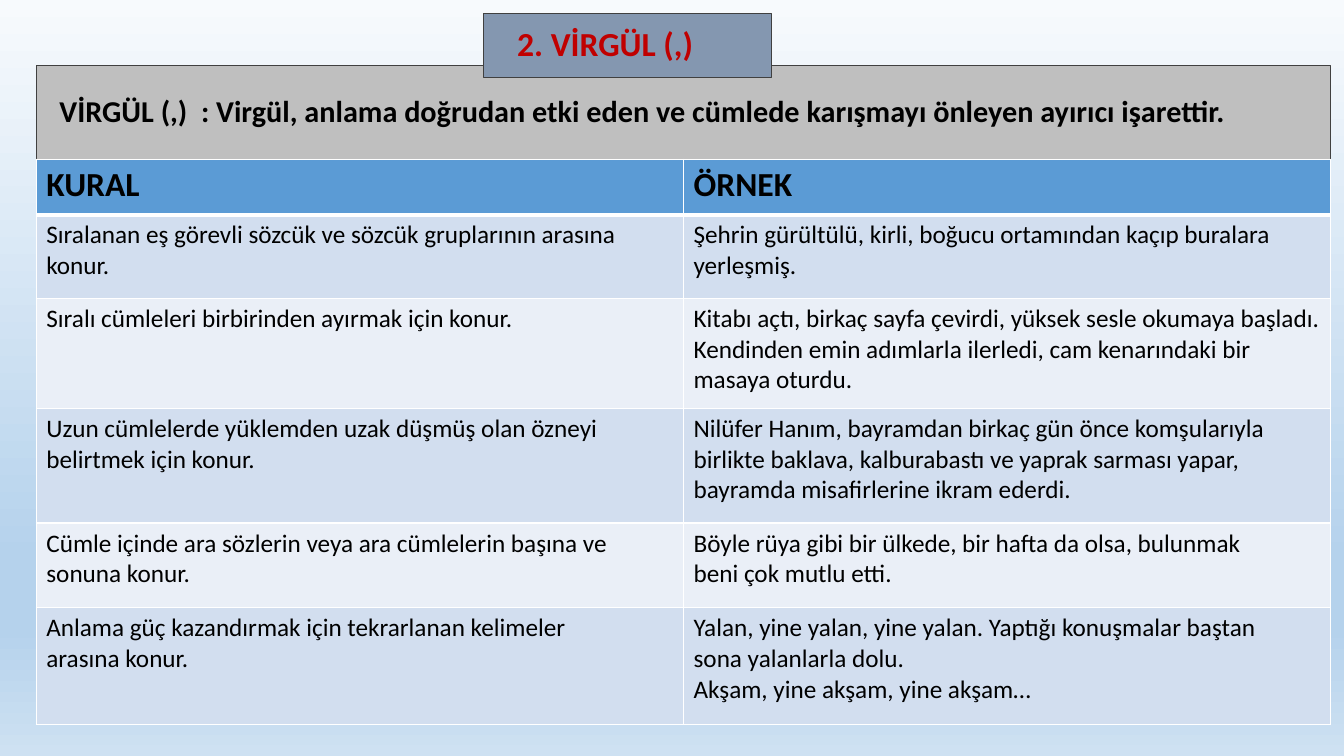
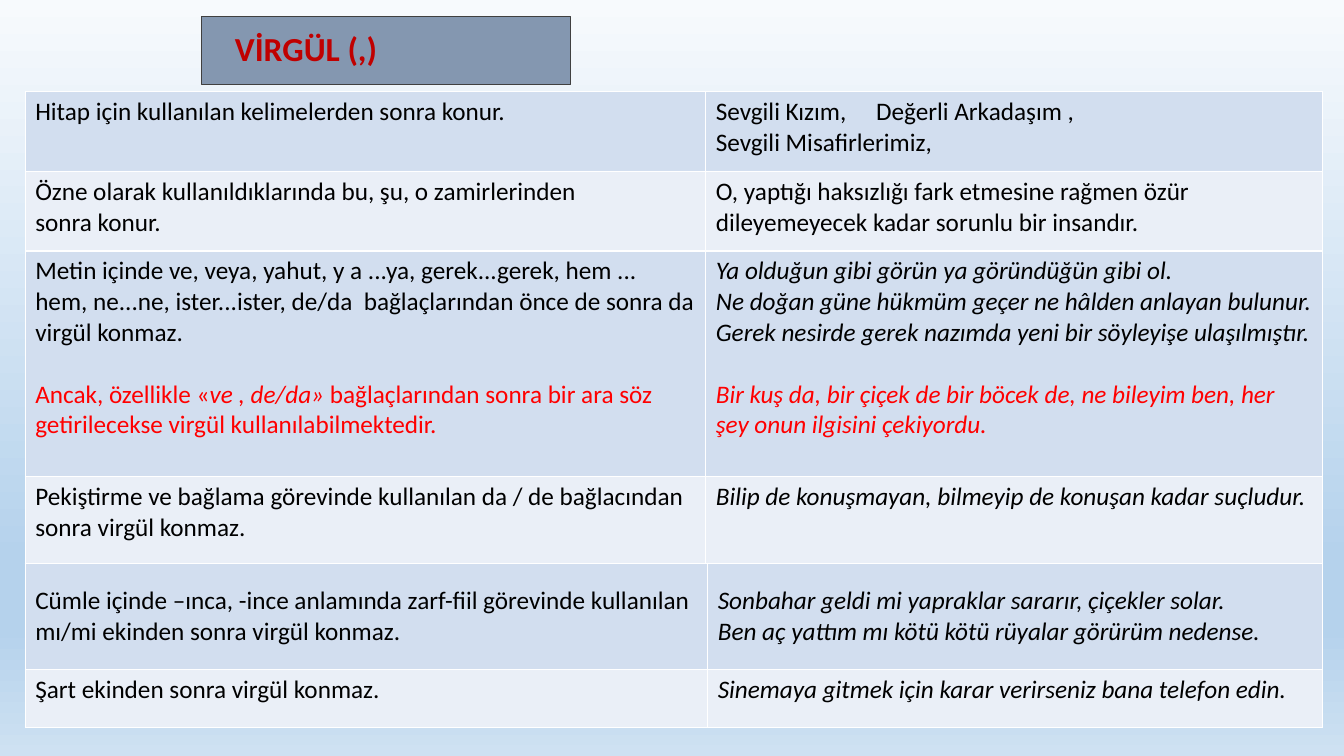
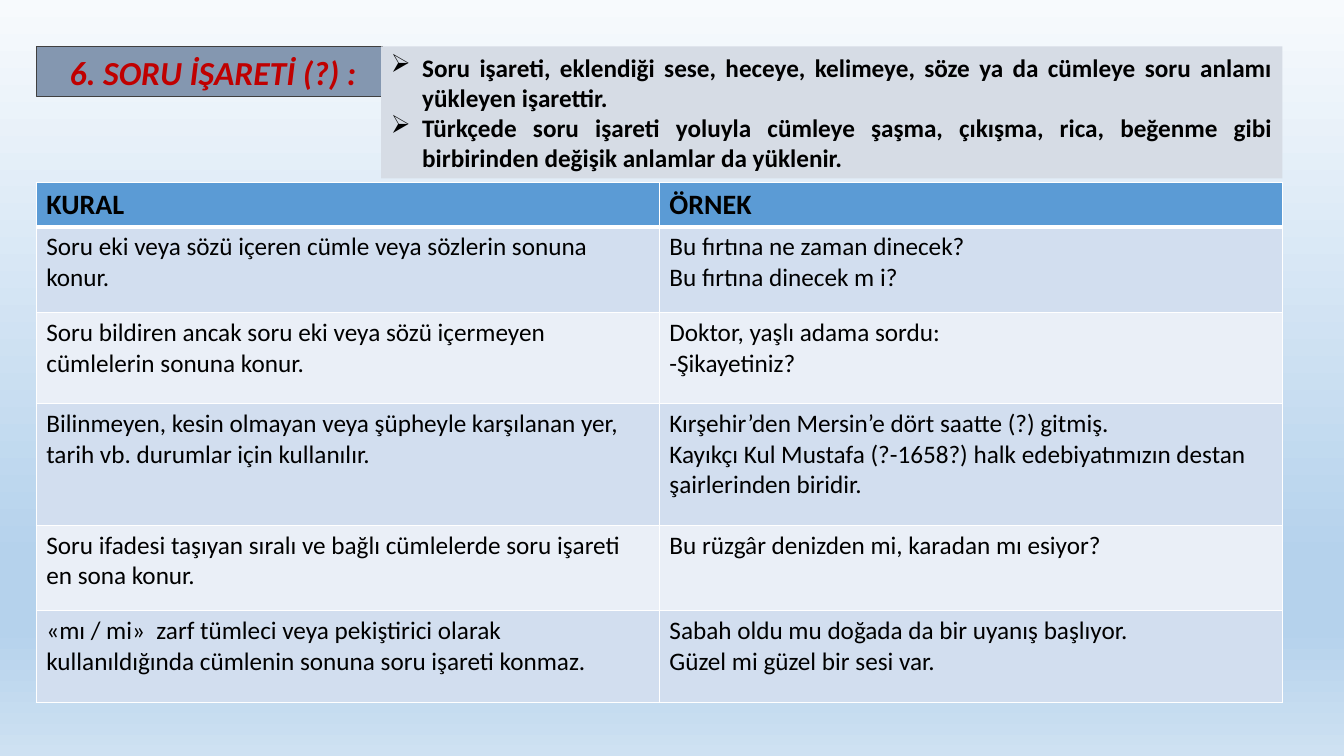
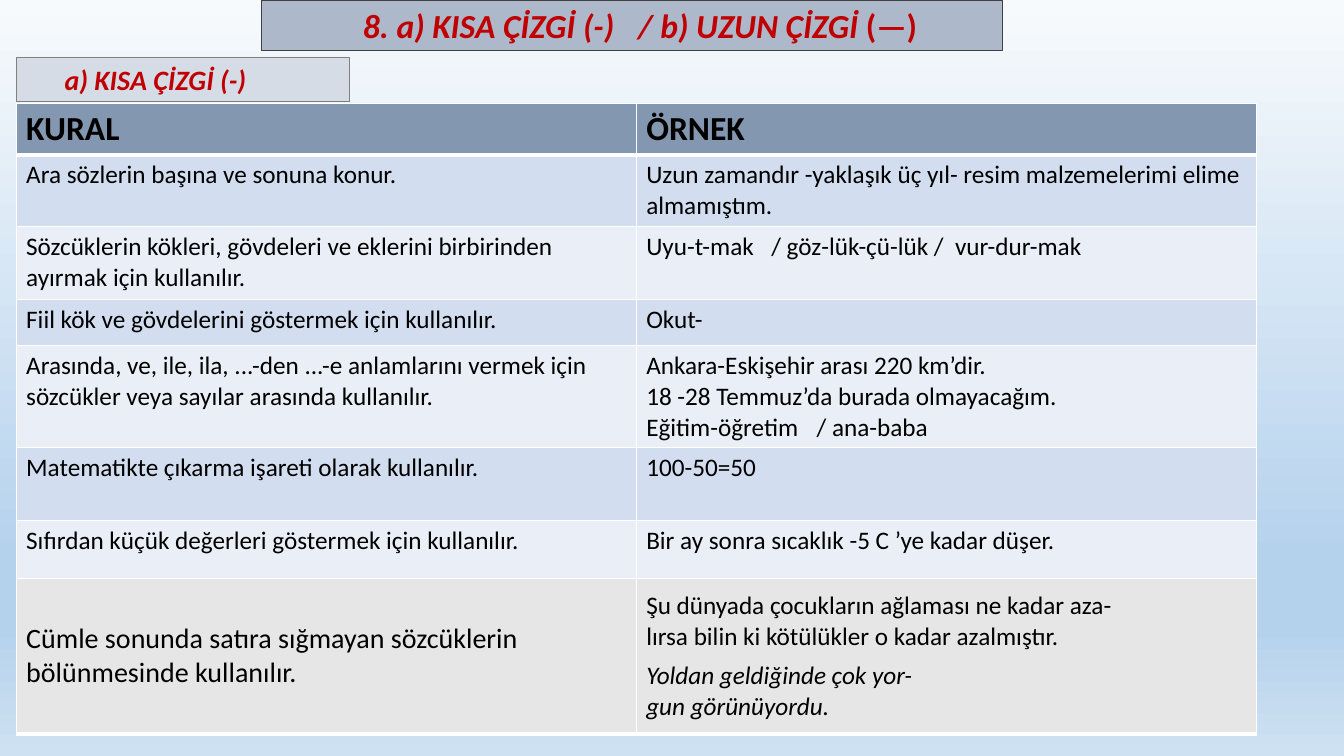
from dataclasses import dataclass

from lxml import etree
from pptx import Presentation
from pptx import util as u
from pptx.dml.color import RGBColor
from pptx.enum import shapes, text
from pptx.oxml.ns import qn

COLORS = {
    "black": "000000", "white": "FFFFFF", "dark_red": "C00000", "red": "FF0000",
    "outline": "404040", "soft_outline": "808080", "band": "BFBFBF",
    "slate": "8497B0", "light_slate": "ADB9CA", "pale_slate": "D6DCE5",
    "header": "5B9BD5", "stripe_a": "D2DEEF", "stripe_b": "EAEFF7", "gray": "E7E6E6",
}
BACKGROUND = [(0, "F7FAFD"), (74, "B5D2EC"), (83, "B5D2EC"), (100, "CEE1F2")]
FONT = "Calibri"
HEADER = ("KURAL", "ÖRNEK")


@dataclass
class Line:
    """One paragraph; parts between underscores switch italic on or off."""
    text: str
    size: float = 18
    color: str = "black"
    bold: bool = False
    italic: bool = False
    before: float = 0
    after: float = 0
    tab: float = 0
    bullet: str = ""
    spacing: float = 1
    align: text.PP_ALIGN = text.PP_ALIGN.LEFT


def rgb(name):
    return RGBColor.from_string(COLORS[name])


def lines(content, **formats):
    return [Line(part, **formats) for part in content.split("\n")]


def write_line(paragraph, line):
    paragraph.alignment = line.align
    paragraph.line_spacing = line.spacing
    paragraph.space_before = u.Pt(line.before)
    paragraph.space_after = u.Pt(line.after)
    properties = paragraph._p.get_or_add_pPr()
    if line.bullet:
        properties.set("marL", str(u.Inches(0.31)))
        properties.set("indent", str(-u.Inches(0.31)))
        etree.SubElement(properties, qn("a:buChar"), char=line.bullet)
    if line.tab:
        stops = etree.SubElement(properties, qn("a:tabLst"))
        etree.SubElement(stops, qn("a:tab"), pos=str(u.Inches(line.tab)), algn="l")
    for index, part in enumerate(line.text.split("_")):
        if part:
            run = paragraph.add_run()
            run.text = part
            run.font.name = FONT
            run.font.size = u.Pt(line.size)
            run.font.bold = line.bold
            run.font.italic = line.italic != (index % 2 == 1)
            run.font.color.rgb = rgb(line.color)


def write(frame, content):
    for index, line in enumerate(content):
        write_line(frame.add_paragraph() if index else frame.paragraphs[0], line)


def set_borders(cell, top, bottom):
    """Draw white cell borders; side borders are 1 point wide."""
    properties = cell._tc.get_or_add_tcPr()
    widths = {"lnL": 1, "lnR": 1, "lnT": top, "lnB": bottom}
    for index, (tag, width) in enumerate(widths.items()):
        border = etree.Element(qn(f"a:{tag}"), w=str(u.Pt(width)))
        fill = etree.SubElement(border, qn("a:solidFill"))
        etree.SubElement(fill, qn("a:srgbClr"), val=COLORS["white"])
        properties.insert(index, border)


class Deck:
    def __init__(self):
        self.presentation = Presentation()
        self.presentation.slide_width = u.Inches(13.33)
        self.presentation.slide_height = u.Inches(7.5)
        self.slide = None
        self.set_background()

    def set_background(self):
        master = self.presentation.slide_master
        fill = master.background.fill
        fill.gradient()
        fill.gradient_angle = 270
        stops = next(master.element.iter(qn("a:gsLst")))
        for stop in list(stops):
            stops.remove(stop)
        for position, color in BACKGROUND:
            stop = etree.SubElement(stops, qn("a:gs"), pos=str(position * 1000))
            etree.SubElement(stop, qn("a:srgbClr"), val=color)

    def new_slide(self):
        self.slide = self.presentation.slides.add_slide(self.presentation.slide_layouts[5])

    def fill_box(self, shape, content, fill, line, inset):
        shape.fill.solid()
        shape.fill.fore_color.rgb = rgb(fill)
        if line:
            shape.line.color.rgb = rgb(line)
            shape.line.width = u.Pt(0.75)
        else:
            shape.line.fill.background()
        frame = shape.text_frame
        frame.word_wrap = True
        frame.auto_size = text.MSO_AUTO_SIZE.NONE
        frame.vertical_anchor = text.MSO_ANCHOR.MIDDLE
        frame.margin_left = u.Inches(inset)
        write(frame, content)

    def title(self, at, content, fill="slate", line="outline", inset=0.33):
        shape = self.slide.shapes.title
        shape.left, shape.top, shape.width, shape.height = map(u.Inches, at)
        self.fill_box(shape, content, fill, line, inset)

    def box(self, at, content, fill="slate", line="outline", inset=0.33):
        shape = self.slide.shapes.add_shape(shapes.MSO_SHAPE.RECTANGLE, *map(u.Inches, at))
        shape.shadow.inherit = False
        self.fill_box(shape, content, fill, line, inset)

    def table(self, at, columns, heights, rows, header_fill=None, header_size=24,
              fills=("stripe_a", "stripe_b"), middle_row=None, bottom=1):
        """Add a rule table; a header row comes first when header_fill is given."""
        header = 1 if header_fill else 0
        if header:
            titles = [lines(name, size=header_size, bold=True) for name in HEADER]
            rows = [titles] + rows
        frame = self.slide.shapes.add_table(
            len(rows), len(columns), *map(u.Inches, (*at, sum(columns), sum(heights))))
        table = frame.table
        table.first_row = bool(header)
        table.horz_banding = False
        for column, width in zip(table.columns, columns):
            column.width = u.Inches(width)
        for index, (row, height, contents) in enumerate(zip(table.rows, heights, rows)):
            row.height = u.Inches(height)
            is_header = index < header
            fill = header_fill if is_header else fills[(index - header) % len(fills)]
            below = 3 if is_header else bottom if index == len(rows) - 1 else 1
            above = 3 if header and index == 1 else 1
            for cell, content in zip(row.cells, contents):
                cell.fill.solid()
                cell.fill.fore_color.rgb = rgb(fill)
                set_borders(cell, above, below)
                if index == middle_row:
                    cell.vertical_anchor = text.MSO_ANCHOR.MIDDLE
                write(cell.text_frame, lines(content) if isinstance(content, str) else content)


def comma_rules(deck):
    deck.new_slide()
    deck.title((0.36, 0.65, 12.84, 0.94), lines(
        "VİRGÜL (,)  : Virgül, anlama doğrudan etki eden ve cümlede karışmayı önleyen "
        "ayırıcı işarettir.", size=21.6, bold=True, spacing=0.9), "band", inset=0.23)
    deck.table((0.36, 1.58), (6.42, 6.42), (0.55, 0.83, 1.09, 1.14, 0.84, 1.16), [
        ("Sıralanan eş görevli sözcük ve sözcük gruplarının arasına\nkonur.",
         "Şehrin gürültülü, kirli, boğucu ortamından kaçıp buralara\nyerleşmiş."),
        ("Sıralı cümleleri birbirinden ayırmak için konur.",
         "Kitabı açtı, birkaç sayfa çevirdi, yüksek sesle okumaya başladı.\n"
         "Kendinden emin adımlarla ilerledi, cam kenarındaki bir masaya oturdu."),
        ("Uzun cümlelerde yüklemden uzak düşmüş olan özneyi\nbelirtmek için konur.",
         "Nilüfer Hanım, bayramdan birkaç gün önce komşularıyla\n"
         "birlikte baklava, kalburabastı ve yaprak sarması yapar,\n"
         "bayramda misafirlerine ikram ederdi."),
        ("Cümle içinde ara sözlerin veya ara cümlelerin başına ve\nsonuna konur.",
         "Böyle rüya gibi bir ülkede, bir hafta da olsa, bulunmak\nbeni çok mutlu etti."),
        ("Anlama güç kazandırmak için tekrarlanan kelimeler\narasına konur.",
         "Yalan, yine yalan, yine yalan. Yaptığı konuşmalar baştan\nsona yalanlarla dolu.\n"
         "Akşam, yine akşam, yine akşam…"),
    ], "header")
    deck.box((4.8, 0.13, 2.85, 0.64), lines(
        "2. VİRGÜL (,)", size=24, color="dark_red", bold=True, spacing=0.9))


def comma_exceptions(deck):
    deck.new_slide()
    deck.title((2, 0.16, 3.66, 0.68), lines(
        "VİRGÜL (,)", size=24, color="dark_red", bold=True, spacing=0.9))
    deck.table((0.25, 0.91), (6.75, 6.12), (0.79, 0.79, 2.24, 0.86), [
        ("Hitap için kullanılan kelimelerden sonra konur.",
         [Line("Sevgili Kızım,\tDeğerli Arkadaşım ,", tab=1.59),
          Line("Sevgili Misafirlerimiz,")]),
        ("Özne olarak kullanıldıklarında bu, şu, o zamirlerinden\nsonra konur.",
         "O, yaptığı haksızlığı fark etmesine rağmen özür dileyemeyecek kadar sorunlu "
         "bir insandır."),
        (lines("Metin içinde ve, veya, yahut, y a ...ya, gerek...gerek, hem ...\n"
               "hem, ne...ne, ister...ister, de/da  bağlaçlarından önce de sonra da\n"
               "virgül konmaz.")
         + [Line("Ancak, özellikle «_ve , de/da»_ bağlaçlarından sonra bir ara söz "
                 "getirilecekse virgül kullanılabilmektedir.", color="red", before=22)],
         lines("Ya olduğun gibi görün ya göründüğün gibi ol.\n"
               "Ne doğan güne hükmüm geçer ne hâlden anlayan bulunur. Gerek nesirde gerek "
               "nazımda yeni bir söyleyişe ulaşılmıştır.", italic=True)
         + [Line("Bir kuş da, bir çiçek de bir böcek de, ne bileyim ben, her şey onun "
                 "ilgisini çekiyordu.", color="red", italic=True, before=22)]),
        ("Pekiştirme ve bağlama görevinde kullanılan da / de bağlacından sonra virgül konmaz.",
         lines("Bilip de konuşmayan, bilmeyip de konuşan kadar suçludur.", italic=True)),
    ])
    deck.table((0.25, 5.59), (6.77, 6.1), (1.05, 0.58), [
        ("Cümle içinde –ınca, -ince anlamında zarf-fiil görevinde kullanılan mı/mi ekinden "
         "sonra virgül konmaz.",
         lines("Sonbahar geldi mi yapraklar sararır, çiçekler solar.\n"
               "Ben aç yattım mı kötü kötü rüyalar görürüm nedense.", italic=True)),
        ("Şart ekinden sonra virgül konmaz.",
         lines("Sinemaya gitmek için karar verirseniz bana telefon edin.", italic=True)),
    ], middle_row=0)


def question_mark(deck):
    deck.new_slide()
    deck.title((0.36, 0.46, 3.43, 0.5), lines(
        "6. SORU İŞARETİ (?) :", size=24, color="dark_red", bold=True, italic=True))
    deck.table((0.36, 1.81), (6.18, 6.18), (0.43, 0.85, 0.9, 1.21, 0.85, 0.91), [
        ("Soru eki veya sözü içeren cümle veya sözlerin sonuna\nkonur.",
         "Bu fırtına ne zaman dinecek?\nBu fırtına dinecek m i?"),
        ("Soru bildiren ancak soru eki veya sözü içermeyen\ncümlelerin sonuna konur.",
         "Doktor, yaşlı adama sordu:\n-Şikayetiniz?"),
        ("Bilinmeyen, kesin olmayan veya şüpheyle karşılanan yer,\n"
         "tarih vb. durumlar için kullanılır.",
         "Kırşehir’den Mersin’e dört saatte (?) gitmiş.\n"
         "Kayıkçı Kul Mustafa (?-1658?) halk edebiyatımızın destan şairlerinden biridir."),
        ("Soru ifadesi taşıyan sıralı ve bağlı cümlelerde soru işareti\nen sona konur.",
         "Bu rüzgâr denizden mi, karadan mı esiyor?"),
        ("«mı / mi»  zarf tümleci veya pekiştirici olarak\n"
         "kullanıldığında cümlenin sonuna soru işareti konmaz.",
         "Sabah oldu mu doğada da bir uyanış başlıyor.\nGüzel mi güzel bir sesi var."),
    ], "header", header_size=20)
    deck.box((3.78, 0.46, 8.94, 1.31), lines(
        "Soru işareti, eklendiği sese, heceye, kelimeye, söze ya da cümleye soru anlamı "
        "yükleyen işarettir.\n"
        "Türkçede soru işareti yoluyla cümleye şaşma, çıkışma, rica, beğenme gibi "
        "birbirinden değişik anlamlar da yüklenir.",
        bold=True, bullet="➢", align=text.PP_ALIGN.JUSTIFY), "pale_slate", None, 0.1)


def hyphen_rules(deck):
    deck.new_slide()
    heading = {"color": "dark_red", "bold": True, "italic": True}
    deck.title((2.59, 0, 7.35, 0.5), lines(
        "8. a) KISA ÇİZGİ (-)\t/ b) UZUN ÇİZGİ _(—)_", size=24, tab=2.73, **heading),
        "light_slate", inset=1.01)
    deck.table((0.16, 1.03), (6.15, 6.15), (0.49, 0.71, 0.72, 0.46, 1.01, 0.72, 0.6), [
        ("Ara sözlerin başına ve sonuna konur.",
         "Uzun zamandır -yaklaşık üç yıl- resim malzemelerimi elime almamıştım."),
        ("Sözcüklerin kökleri, gövdeleri ve eklerini birbirinden\nayırmak için kullanılır.",
         lines("Uyu-t-mak\t/ göz-lük-çü-lük /  vur-dur-mak", tab=1.24)),
        ("Fiil kök ve gövdelerini göstermek için kullanılır.", "Okut-"),
        ("Arasında, ve, ile, ila, ...-den ...-e anlamlarını vermek için\n"
         "sözcükler veya sayılar arasında kullanılır.",
         lines("Ankara-Eskişehir arası 220 km’dir.\n18 -28 Temmuz’da burada olmayacağım.")
         + [Line("Eğitim-öğretim\t/ ana-baba", tab=1.69)]),
        ("Matematikte çıkarma işareti olarak kullanılır.", "100-50=50"),
        ("Sıfırdan küçük değerleri göstermek için kullanılır.",
         "Bir ay sonra sıcaklık -5 C ’ye kadar düşer."),
    ], "slate")
    deck.table((0.16, 5.74), (6.15, 6.15), (1.54,), [
        (lines("Cümle sonunda satıra sığmayan sözcüklerin bölünmesinde kullanılır.", size=20),
         [Line("Şu dünyada çocukların ağlaması ne kadar aza-"),
          Line("lırsa bilin ki kötülükler o kadar azalmıştır.", after=6)]
         + lines("Yoldan geldiğinde çok yor-\ngun görünüyordu.", italic=True)),
    ], fills=("gray",), middle_row=0, bottom=3)
    deck.box((0.16, 0.57, 3.31, 0.44), lines("a) KISA ÇİZGİ (-)", size=20, **heading),
             "pale_slate", "soft_outline", 0.48)


def main():
    deck = Deck()
    for build in (comma_rules, comma_exceptions, question_mark, hyphen_rules):
        build(deck)
    deck.presentation.save("out.pptx")


if __name__ == "__main__":
    main()
